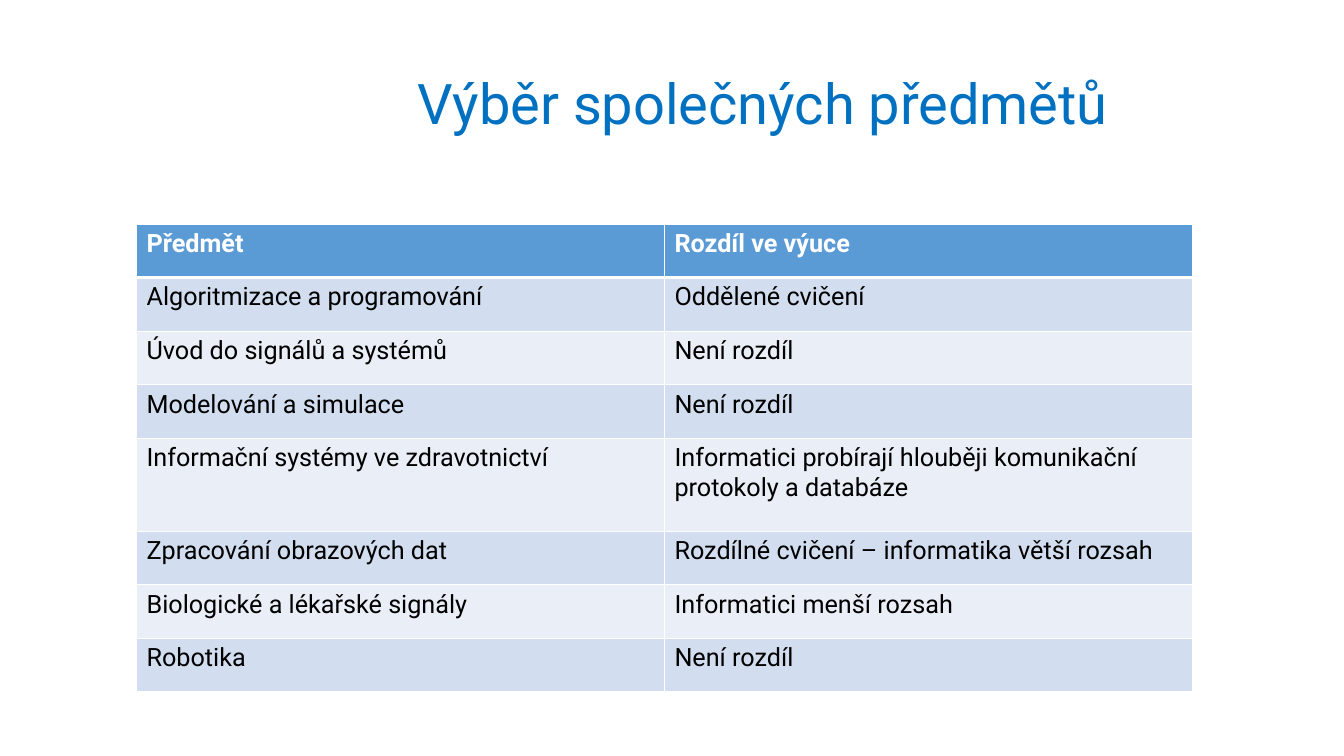
import pptx
import pptx.util
import pptx.dml.color
import pptx.enum.text
import pptx.oxml
import pptx.oxml.ns

Pt = pptx.util.Pt
COLORS = {"title": "0070C0", "header": "5B9BD5", "odd": "D2DEEF",
          "even": "EAEFF7", "text": "000000", "white": "FFFFFF"}

SUBJECTS = [
    ("Předmět", "Rozdíl ve výuce"),
    ("Algoritmizace a programování", "Oddělené cvičení"),
    ("Úvod do signálů a systémů", "Není rozdíl"),
    ("Modelování a simulace", "Není rozdíl"),
    ("Informační systémy ve zdravotnictví",
     "Informatici probírají hlouběji komunikační protokoly a databáze"),
    ("Zpracování obrazových dat", "Rozdílné cvičení – informatika větší rozsah"),
    ("Biologické a lékařské signály", "Informatici menší rozsah"),
    ("Robotika", "Není rozdíl"),
]
ROW_HEIGHT, TALL_ROW, TALL_HEIGHT = 38.3, 4, 66.2


def rgb(name):
    return pptx.dml.color.RGBColor.from_string(COLORS[name])


class Deck:
    font = "Roboto"

    def __init__(self, width, height):
        self.prs = pptx.Presentation()
        self.prs.slide_width, self.prs.slide_height = Pt(width), Pt(height)

    def add_slide(self):
        self.s = self.prs.slides.add_slide(self.prs.slide_layouts[5])

    def add_text(self, p, text, color, **formats):
        r = p.add_run()
        r.text = text
        for key, value in {"name": self.font, **formats}.items():
            setattr(r.font, key, value)
        r.font.color.rgb = rgb(color)

    def title(self, text, left, top, width, height):
        sp = self.s.shapes.title
        box = {"left": left, "top": top, "width": width, "height": height}
        for key, value in box.items():
            setattr(sp, key, Pt(value))
        tf = sp.text_frame
        formats = {"word_wrap": True,
                   "auto_size": pptx.enum.text.MSO_AUTO_SIZE.NONE,
                   "vertical_anchor": pptx.enum.text.MSO_ANCHOR.TOP}
        for key, value in formats.items():
            setattr(tf, key, value)
        p = tf.paragraphs[0]
        p.alignment = pptx.enum.text.PP_ALIGN.JUSTIFY
        p.line_spacing = 1.0
        self.add_text(p, text, "title", size=Pt(40))

    def borders(self, cell, **widths):
        tcPr = cell._tc.get_or_add_tcPr()
        for side, width in widths.items():
            tcPr.append(pptx.oxml.parse_xml(
                f'<a:ln{side} {pptx.oxml.ns.nsdecls("a")} w="{Pt(width)}"><a:solidFill>'
                f'<a:srgbClr val="{COLORS["white"]}"/></a:solidFill></a:ln{side}>'))

    def table(self, rows, heights, left, top, width):
        frame = self.s.shapes.add_table(len(rows), len(rows[0]), Pt(left), Pt(top),
                                        Pt(width), Pt(sum(heights)))
        table = frame.table
        for i, (texts, height) in enumerate(zip(rows, heights)):
            table.rows[i].height = Pt(height)
            header = i == 0
            fill = "header" if header else ("even", "odd")[i % 2]
            for j, text in enumerate(texts):
                cell = table.cell(i, j)
                self.borders(cell, L=1, R=1, T=3 if i == 1 else 1, B=3 if header else 1)
                cell.fill.solid()
                cell.fill.fore_color.rgb = rgb(fill)
                self.add_text(cell.text_frame.paragraphs[0], text,
                              "white" if header else "text", size=Pt(18), bold=header)


def main():
    deck = Deck(960, 540)
    deck.add_slide()

    # Title
    deck.title("Výběr společných předmětů", 290.9, 45.4, 623.5, 55.4)

    # Subject table
    heights = [TALL_HEIGHT if i == TALL_ROW else ROW_HEIGHT for i in range(len(SUBJECTS))]
    deck.table(SUBJECTS, heights, 97.5, 160, 754.2)

    deck.prs.save("out.pptx")


if __name__ == "__main__":
    main()
